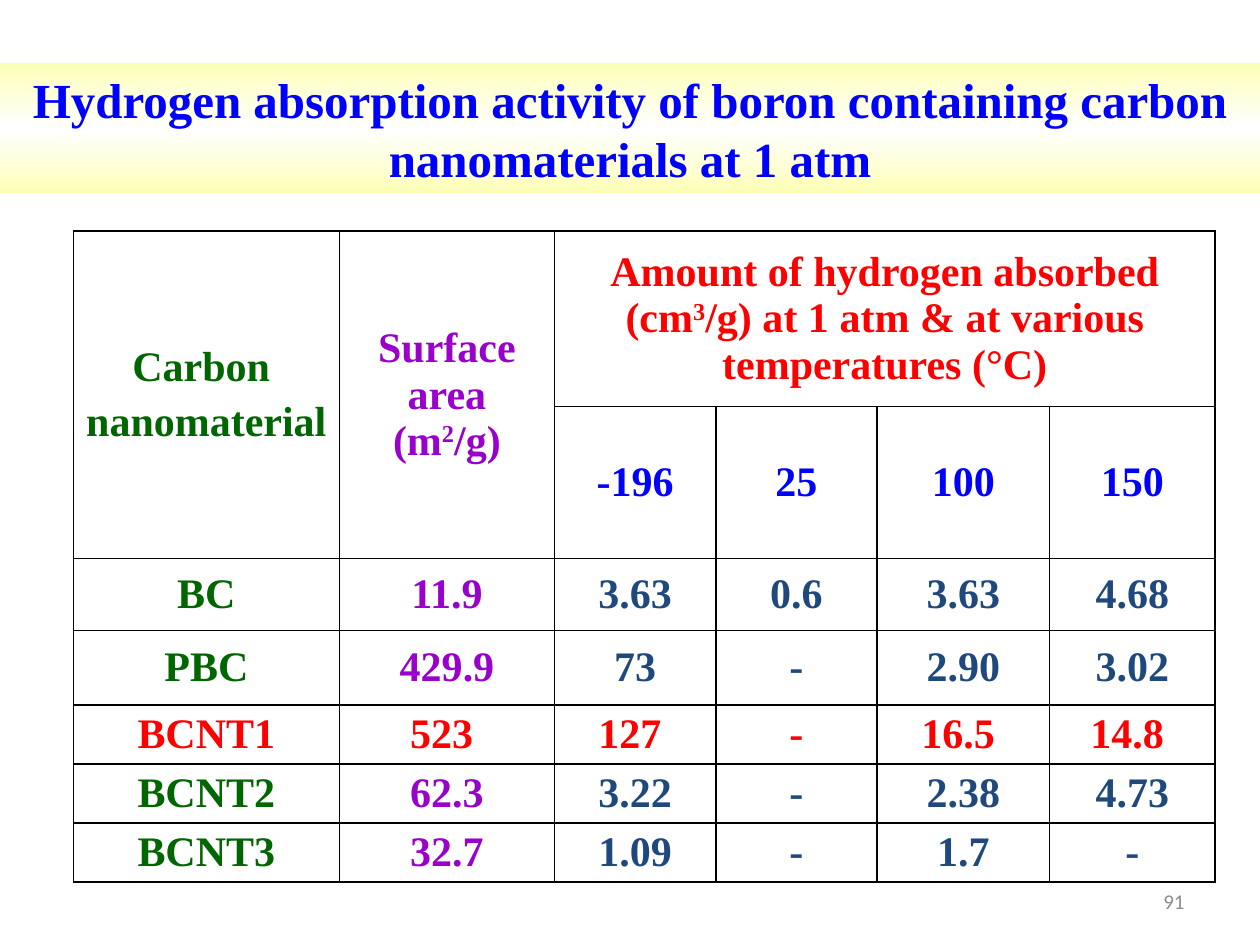
from copy import deepcopy
from dataclasses import dataclass

from lxml.etree import SubElement
from pptx import Presentation
from pptx.dml.color import RGBColor
from pptx.enum.text import MSO_ANCHOR, MSO_AUTO_SIZE, PP_ALIGN
from pptx.oxml.ns import qn
from pptx.util import Cm, Pt


@dataclass(frozen=True)
class Theme:
    serif: str = "Times New Roman"
    sans: str = "Calibri"
    title_size: int = 28
    table_size: int = 24
    number_size: int = 12
    blue: str = "0000FF"
    green: str = "006600"
    purple: str = "9900CC"
    red: str = "FF0000"
    navy: str = "1F497D"
    grey: str = "8C8C8C"
    black: str = "000000"
    band: tuple = ("FDFFB7", "FFFFFF", "FDFFB7")


theme = Theme()


def add_span(para, text, size, color, font=theme.serif, bold=True):
    span = para.add_run()
    span.text = text
    span.font.name = font
    span.font.size = Pt(size)
    span.font.bold = bold
    span.font.color.rgb = RGBColor.from_string(color)
    return span


def fill_cell(cell, paragraphs, color):
    """Write centred paragraphs, each a list of runs; "^" marks a superscript."""
    cell.vertical_anchor = MSO_ANCHOR.MIDDLE
    for index, texts in enumerate(paragraphs):
        para = cell.text_frame.paragraphs[0] if index == 0 else cell.text_frame.add_paragraph()
        para.alignment = PP_ALIGN.CENTER
        if index:
            para.space_before = Pt(4.8)
        for text in texts:
            span = add_span(para, text.lstrip("^"), theme.table_size, color)
            if text.startswith("^"):
                span.font._element.set("baseline", "30000")


deck = Presentation()
deck.slide_width, deck.slide_height = Cm(25.4), Cm(19.05)
page = deck.slides.add_slide(deck.slide_layouts[5])

# Title on a gradient band
title = page.shapes.title
title.left, title.top, title.width, title.height = Cm(0), Cm(1.27), Cm(25.4), Cm(2.62)
title.fill.gradient()
title.fill.gradient_angle = 90
stop_list = title._element.spPr.find(".//" + qn("a:gsLst"))
stop_list.append(deepcopy(stop_list[-1]))
for index, (stop, color) in enumerate(zip(title.fill.gradient_stops, theme.band)):
    stop.position = index / 2
    stop.color.rgb = RGBColor.from_string(color)
frame = title.text_frame
frame.word_wrap = True
frame.auto_size = MSO_AUTO_SIZE.SHAPE_TO_FIT_TEXT
frame.vertical_anchor = MSO_ANCHOR.TOP
para = frame.paragraphs[0]
para.alignment = PP_ALIGN.CENTER
add_span(para, "Hydrogen absorption activity of boron containing carbon nanomaterials at 1 atm",
         theme.title_size, theme.blue)

# Table grid
column_widths = [5.36, 4.34, 3.25, 3.25, 3.48, 3.33]
row_heights = [3.53, 3.07, 1.45, 1.5, 1.19, 1.19, 1.19]
table = page.shapes.add_table(len(row_heights), len(column_widths), Cm(1.48), Cm(4.66),
                              Cm(sum(column_widths)), Cm(sum(row_heights))).table
table.first_row = table.horz_banding = False
for column, width in zip(table.columns, column_widths):
    column.width = Cm(width)
for row, height in zip(table.rows, row_heights):
    row.height = Cm(height)

# Cell borders, no fill; no vertical margins, so the rows keep their heights
for cell in table.iter_cells():
    cell.margin_top = cell.margin_bottom = Cm(0)
    properties = cell._tc.get_or_add_tcPr()
    for side in ("a:lnL", "a:lnR", "a:lnT", "a:lnB"):
        line = SubElement(properties, qn(side), w=str(Pt(1)))
        SubElement(SubElement(line, qn("a:solidFill")), qn("a:srgbClr"), val=theme.black)
    cell.fill.background()

# Headings
table.cell(0, 0).merge(table.cell(1, 0))
table.cell(0, 1).merge(table.cell(1, 1))
table.cell(0, 2).merge(table.cell(0, 5))
fill_cell(table.cell(0, 0), [["Carbon "], ["nanomaterial"]], theme.green)
fill_cell(table.cell(0, 1), [["Surface area (m", "^2", "/g)"]], theme.purple)
fill_cell(table.cell(0, 2), [["Amount of hydrogen absorbed (cm", "^3",
                              "/g) at 1 atm & at various temperatures (°C)"]], theme.red)
for column, temperature in enumerate(["-196", "25", "100", "150"], start=2):
    fill_cell(table.cell(1, column), [[temperature]], theme.blue)

# Measurements, with BCNT1 highlighted
measurements = [
    ["BC", "11.9", "3.63", "0.6", "3.63", "4.68"],
    ["PBC", "429.9", "73", "-", "2.90", "3.02"],
    ["BCNT1", "523 ", "127 ", "-", "16.5 ", "14.8 "],
    ["BCNT2", "62.3", "3.22", "-", "2.38", "4.73"],
    ["BCNT3", "32.7", "1.09", "-", "1.7", "-"],
]
column_colors = [theme.green, theme.purple] + [theme.navy] * 4
for row, values in enumerate(measurements, start=2):
    for column, value in enumerate(values):
        color = theme.red if values[0] == "BCNT1" else column_colors[column]
        fill_cell(table.cell(row, column), [[value]], color)

# Slide number
box = page.shapes.add_textbox(Cm(18.21), Cm(17.65), Cm(5.92), Cm(1.02))
box.text_frame.word_wrap = True
box.text_frame.vertical_anchor = MSO_ANCHOR.MIDDLE
para = box.text_frame.paragraphs[0]
para.alignment = PP_ALIGN.RIGHT
add_span(para, "91", theme.number_size, theme.grey, theme.sans, bold=False)

deck.save("out.pptx")
